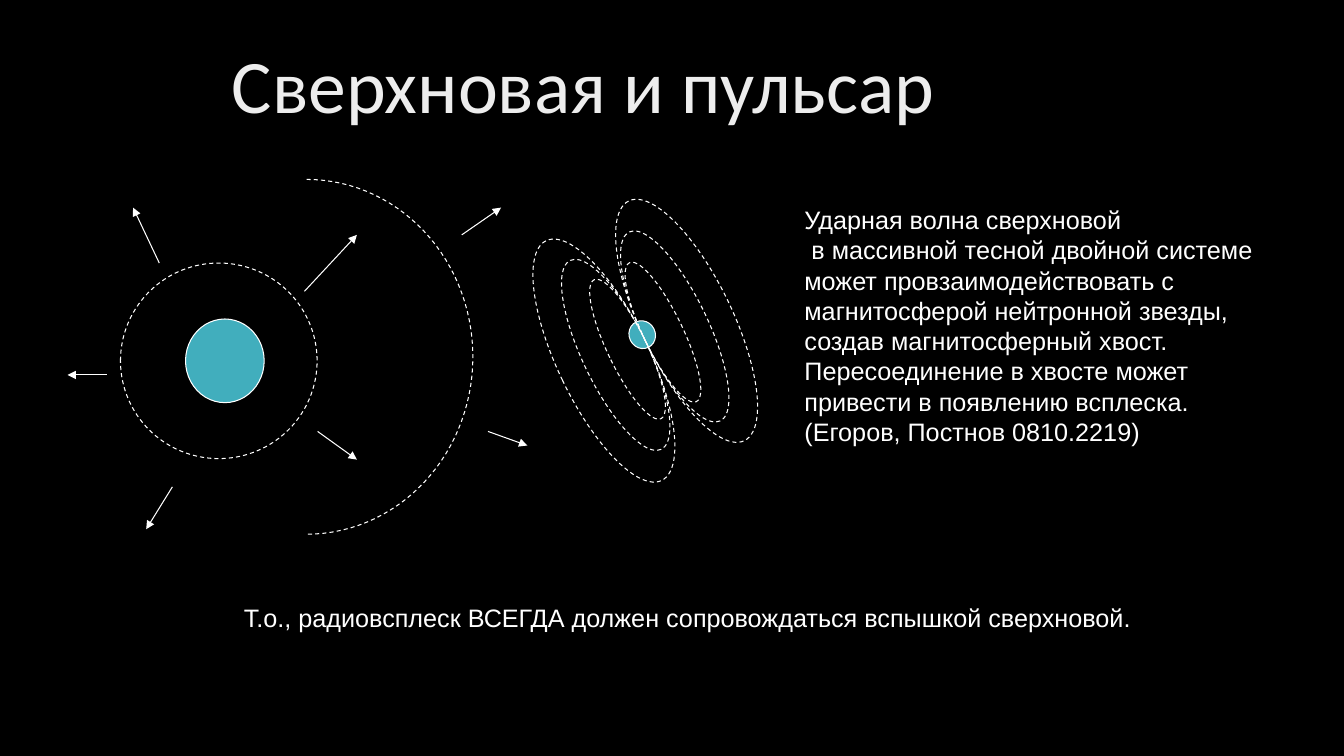
from math import cos, pi, radians, sin

from lxml import etree
from pptx import Presentation
from pptx.dml.color import RGBColor
from pptx.enum.dml import MSO_LINE
from pptx.enum.shapes import MSO_CONNECTOR, MSO_SHAPE
from pptx.enum.text import MSO_ANCHOR, PP_ALIGN
from pptx.oxml.ns import qn
from pptx.util import Inches, Pt

OVAL = MSO_SHAPE.OVAL
STRAIGHT = MSO_CONNECTOR.STRAIGHT
DASH = MSO_LINE.DASH
MIDDLE = MSO_ANCHOR.MIDDLE
LEFT = PP_ALIGN.LEFT
COLORS = {"back": "000000", "title": "EDEDED", "ink": "FFFFFF", "star": "41AEBD"}
TILT = -25.7
LOOPS = [(0.91, 2.64), (0.65, 2.08), (0.39, 1.53)]
RAYS = [
    (2.35, 1.11, 2.87, 0.55), (2.48, 2.5, 2.87, 2.78),
    (1.04, 3.05, 0.78, 3.47), (0.91, 0.83, 0.65, 0.28),
    (0.39, 1.94, 0, 1.94), (3.91, 0.55, 4.3, 0.28),
    (4.17, 2.5, 4.56, 2.64),
]
STORY = """Ударная волна сверхновой
 в массивной тесной двойной системе
может провзаимодействовать с
магнитосферой нейтронной звезды,
создав магнитосферный хвост.
Пересоединение в хвосте может
привести в появлению всплеска.
(Егоров, Постнов 0810.2219)"""
CLOSE = "Т.о., радиовсплеск ВСЕГДА должен сопровождаться вспышкой сверхновой."


def hue(name):
    """Return the named colour."""
    return RGBColor.from_string(COLORS[name])


def stroke(shape, dash=False):
    """Give a shape the thin white outline."""
    shape.line.color.rgb = hue("ink")
    shape.line.width = Pt(0.75)
    if dash:
        shape.line.dash_style = DASH


def oval(group, x, y, w, h, fill=None, turn=0):
    """Draw an ellipse centred on a point, filled or dashed."""
    shape = group.shapes.add_shape(
        OVAL, Inches(x - w / 2), Inches(y - h / 2), Inches(w), Inches(h))
    shape.shadow.inherit = False
    shape.rotation = turn
    if fill:
        shape.fill.solid()
        shape.fill.fore_color.rgb = hue(fill)
    else:
        shape.fill.background()
    stroke(shape, dash=not fill)


def arrow(group, x1, y1, x2, y2):
    """Draw a thin arrow between two points."""
    line = group.shapes.add_connector(
        STRAIGHT, Inches(x1), Inches(y1), Inches(x2), Inches(y2))
    stroke(line)
    etree.SubElement(line.line._get_or_add_ln(), qn("a:tailEnd"), type="triangle")
    etree.SubElement(line._element.spPr, qn("a:effectLst"))


def front(group, x, y, rx, ry):
    """Draw the dashed half ellipse of the shock front."""
    steps = 60
    turns = [pi * i / steps - pi / 2 for i in range(steps + 1)]
    dots = [(Inches(x + rx * cos(t)), Inches(y + ry * sin(t))) for t in turns]
    pen = group.shapes.build_freeform(*dots[0])
    pen.add_line_segments(dots[1:], close=False)
    shape = pen.convert_to_shape()
    shape.shadow.inherit = False
    shape.fill.background()
    stroke(shape, dash=True)


def nova(slide, x, y):
    """Draw the supernova, its shells and rays from a corner."""
    group = slide.shapes.add_group_shape()
    oval(group, x + 1.56, y + 1.8, 0.78, 0.83, "star")
    oval(group, x + 1.5, y + 1.8, 1.95, 1.94)
    front(group, x + 2.37, y + 1.76, 1.65, 1.76)
    for x1, y1, x2, y2 in RAYS:
        arrow(group, x + x1, y + y1, x + x2, y + y2)


def pulsar(slide, x, y):
    """Draw the neutron star and its field loops around a centre."""
    group = slide.shapes.add_group_shape()
    oval(group, x - 0.03, y - 0.06, 0.26, 0.28, "star", TILT)
    tilt = radians(TILT)
    for w, h in LOOPS:
        for side in (-w / 2, w / 2):
            oval(group, x + side * cos(tilt), y + side * sin(tilt), w, h, turn=TILT)


def style(part, size, face, color):
    """Format every run of a paragraph."""
    for run in part.runs:
        run.font.size = Pt(size)
        run.font.name = face
        run.font.color.rgb = hue(color)


def head(slide, x, y, w, h):
    """Fill and place the title."""
    title = slide.shapes.title
    title.left, title.top = Inches(x), Inches(y)
    title.width, title.height = Inches(w), Inches(h)
    frame = title.text_frame
    frame.text = "Сверхновая и пульсар"
    frame.vertical_anchor = MIDDLE
    part = frame.paragraphs[0]
    part.alignment = LEFT
    part.line_spacing = 0.9
    style(part, 54, "Calibri", "title")


def note(slide, text, x, y, w, h):
    """Add a text box with manual line breaks."""
    box = slide.shapes.add_textbox(Inches(x), Inches(y), Inches(w), Inches(h))
    frame = box.text_frame
    frame.word_wrap = False
    part = frame.paragraphs[0]
    part.text = text.replace("\n", "\v")
    part.alignment = LEFT
    style(part, 18, "Arial", "ink")


def main():
    """Build and save the slide."""
    deck = Presentation()
    deck.slide_width, deck.slide_height = Inches(13.33), Inches(7.5)
    slide = deck.slides.add_slide(deck.slide_layouts[5])
    back = slide.background.fill
    back.solid()
    back.fore_color.rgb = hue("back")
    head(slide, 2.2, 0.16, 8.62, 1.45)
    pulsar(slide, 6.4, 3.38)
    nova(slide, 0.67, 1.78)
    note(slide, STORY, 7.88, 1.98, 4.65, 2.5)
    note(slide, CLOSE, 2.32, 5.93, 9.08, 0.4)
    deck.save("out.pptx")


if __name__ == "__main__":
    main()
